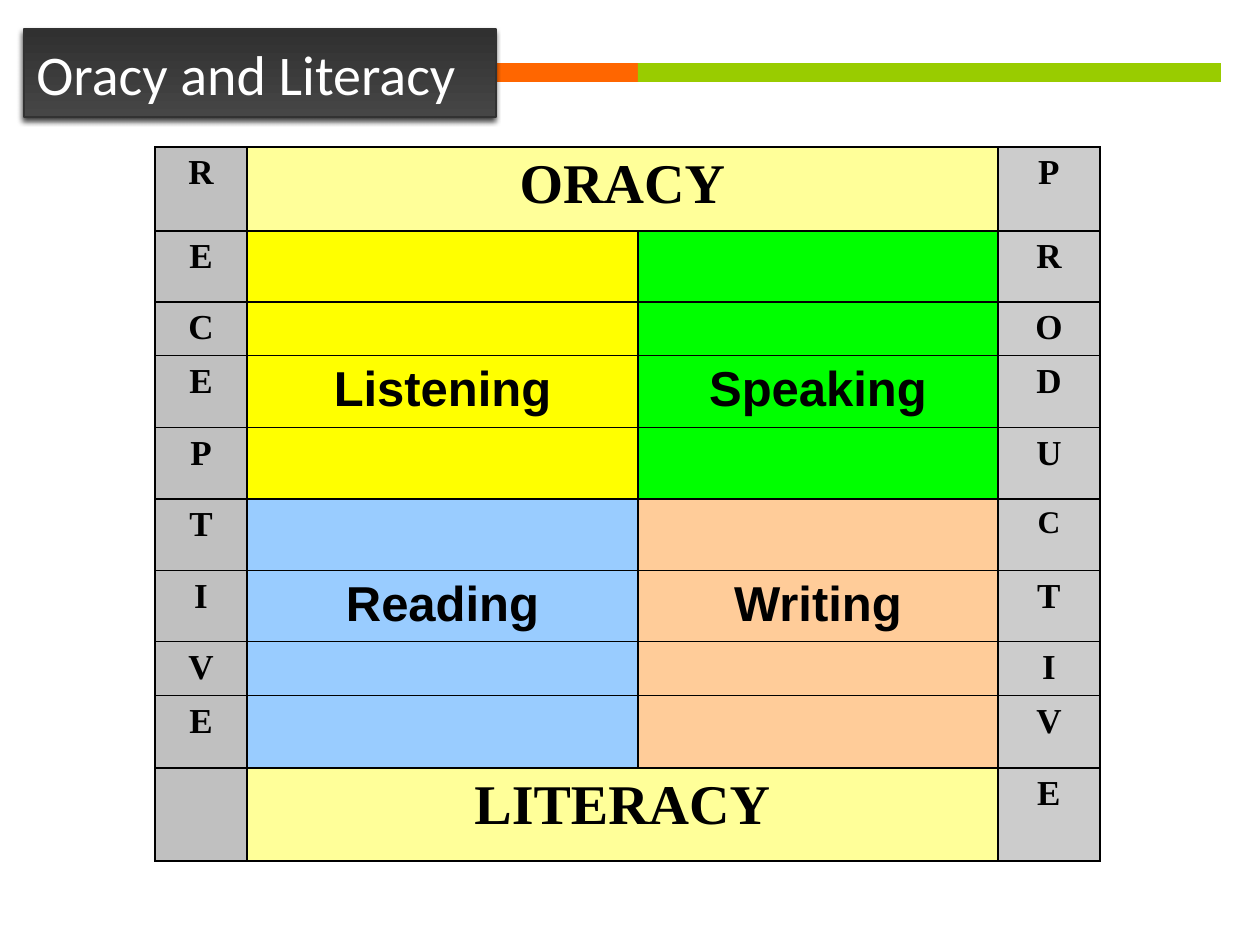
import pptx
import pptx.util
import pptx.dml.color
import pptx.enum.shapes
import pptx.enum.text
import pptx.oxml
import pptx.oxml.ns

PX = 914400 // 126
NS = pptx.oxml.ns.nsdecls("a")
ALIGN = pptx.enum.text.PP_ALIGN
ANCHOR = pptx.enum.text.MSO_ANCHOR
RECT = pptx.enum.shapes.MSO_SHAPE.RECTANGLE


def color(code):
    return pptx.dml.color.RGBColor.from_string(code)


def style(para, font, size, code, bold):
    for run in para.runs:
        run.font.name = font
        run.font.size = pptx.util.Pt(size)
        run.font.bold = bold
        run.font.color.rgb = color(code)


deck = pptx.Presentation()
deck.slide_width = pptx.util.Inches(10)
deck.slide_height = pptx.util.Inches(7.5)
slide = deck.slides.add_slide(deck.slide_layouts[6])

# Coloured bar in three parts
left = 39
for width, code in [(221, "990000"), (378, "FF6600"), (583, "99CC00")]:
    bar = slide.shapes.add_shape(RECT, left * PX, 63 * PX, width * PX, 19 * PX)
    bar.shadow.inherit = False
    bar.fill.solid()
    bar.fill.fore_color.rgb = color(code)
    bar.line.fill.background()
    left += width

# Title box with gradient and shadow
title = slide.shapes.add_shape(RECT, 24 * PX, 29 * PX, 472 * PX, 88 * PX)
title.fill.gradient()
title.fill.gradient_angle = 270
for stop, code in zip(title.fill.gradient_stops, ["303030", "464646"]):
    stop.color.rgb = color(code)
title.line.color.rgb = color("323232")
title.line.width = pptx.util.Pt(1)
title.shadow.inherit = False
glow = title.element.spPr.find(pptx.oxml.ns.qn("a:effectLst"))
glow.append(pptx.oxml.parse_xml(
    f'<a:outerShdw {NS} blurRad="38100" dist="25400" dir="6600000" rotWithShape="0">'
    '<a:srgbClr val="000000"><a:alpha val="75000"/></a:srgbClr></a:outerShdw>'))
frame = title.text_frame
frame.word_wrap = True
frame.vertical_anchor = ANCHOR.MIDDLE
frame.text = "Oracy and Literacy"
frame.paragraphs[0].alignment = ALIGN.LEFT
style(frame.paragraphs[0], "Calibri", 32, "FFFFFF", False)

# Table grid
cols = [92, 391, 360, 102]
rows = [84, 71, 54, 72, 71, 72, 71, 54, 72, 93]
grid = slide.shapes.add_table(
    len(rows), len(cols), 155 * PX, 147 * PX, sum(cols) * PX, sum(rows) * PX).table
for col, width in zip(grid.columns, cols):
    col.width = width * PX
for row, height in zip(grid.rows, rows):
    row.height = height * PX

# Words by cell: side letters, skills, headings
words = {(3, 1): "Listening", (3, 2): "Speaking", (6, 1): "Reading",
         (6, 2): "Writing", (0, 1): "ORACY", (9, 1): "LITERACY"}
for side, word in [(0, "RECEPTIVE"), (3, "PRODUCTIVE")]:
    for r, mark in enumerate(word):
        words[r, side] = mark

# Fills, borders and text
last = len(rows) - 1
heavy = {0, 1, 5, 9, 10}
for r in range(len(rows)):
    if r in (0, last):
        fills = ["C0C0C0", "FFFF99", "FFFF99", "CCCCCC"]
    elif r < 5:
        fills = ["C0C0C0", "FFFF00", "00FF00", "CCCCCC"]
    else:
        fills = ["C0C0C0", "99CCFF", "FFCC99", "CCCCCC"]
    for c, code in enumerate(fills):
        cell = grid.cell(r, c)
        cell.fill.solid()
        cell.fill.fore_color.rgb = color(code)
        top = 12700 if r in heavy else 9525
        base = 12700 if r + 1 in heavy else 9525
        edges = [("L", 12700), ("R", 12700), ("T", top), ("B", base)]
        for i, (edge, width) in enumerate(edges):
            cell.fill._xPr.insert(i, pptx.oxml.parse_xml(
                f'<a:ln{edge} {NS} w="{width}"><a:solidFill>'
                f'<a:srgbClr val="000000"/></a:solidFill></a:ln{edge}>'))
        if (r, c) not in words:
            continue
        para = cell.text_frame.paragraphs[0]
        para.text = words[r, c]
        para.alignment = ALIGN.CENTER
        if c in (0, 3):
            font, size = "Times New Roman", 18 if (r, c) == (5, 3) else 20
        elif r in (0, last):
            font, size = "Times New Roman", 32
        else:
            font, size = "Arial", 28
        style(para, font, size, "000000", True)
for r in (0, last):
    grid.cell(r, 1).merge(grid.cell(r, 2))

deck.save("out.pptx")
